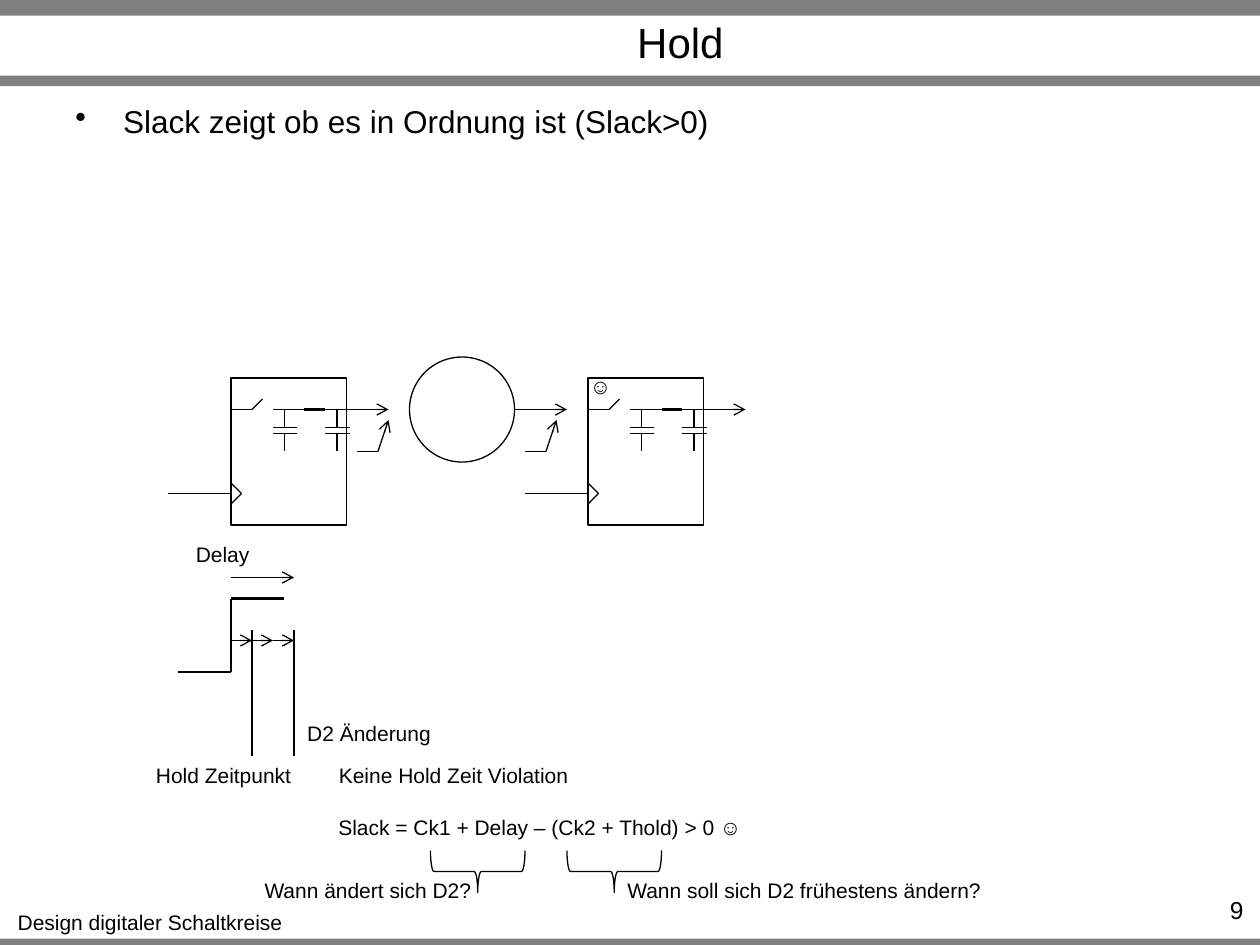
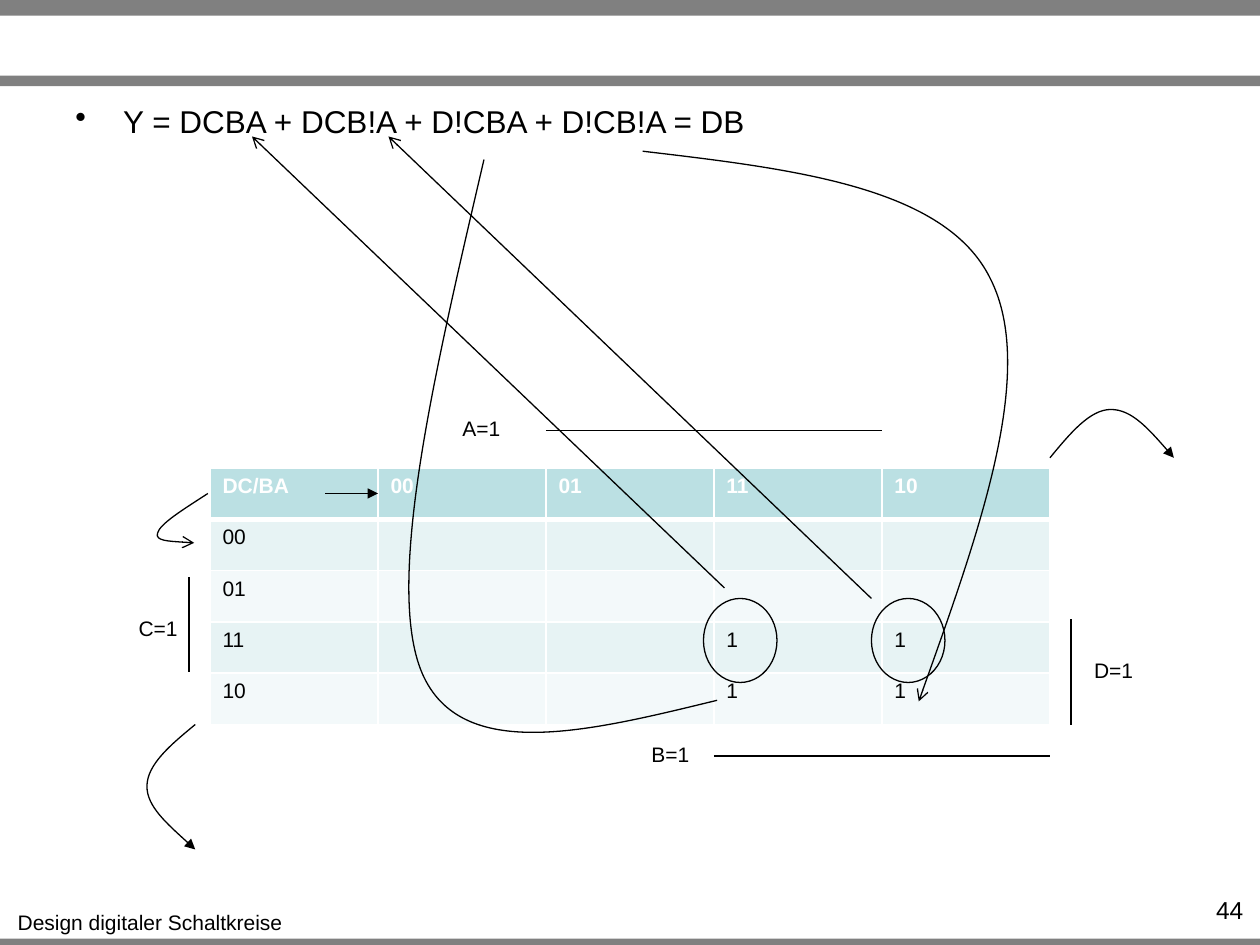
from lxml import etree
from pptx import Presentation
from pptx.dml.color import RGBColor
from pptx.enum.shapes import MSO_CONNECTOR, MSO_SHAPE
from pptx.enum.text import MSO_ANCHOR, MSO_AUTO_SIZE, PP_ALIGN
from pptx.oxml.ns import qn
from pptx.util import Emu, Inches, Pt

STRAIGHT = MSO_CONNECTOR.STRAIGHT
RECT, OVAL, BRACE = MSO_SHAPE.RECTANGLE, MSO_SHAPE.OVAL, MSO_SHAPE.LEFT_BRACE
LEFT, CENTER, RIGHT = PP_ALIGN.LEFT, PP_ALIGN.CENTER, PP_ALIGN.RIGHT
MIDDLE = MSO_ANCHOR.MIDDLE
NO_AUTOSIZE = MSO_AUTO_SIZE.NONE

FONT = "Arial"
INK, PAPER, BAND = "000000", "FFFFFF", "808080"
HEADER_FILL, ROW_FILLS = "BBE0E3", ("E7F3F4", "F3F9FA")
TITLE_ONLY, BLANK = 5, 6  # layout numbers
COLUMNS, ROWS = 120, 90  # grid of the slide, 12 cells to the inch
LABEL_HEIGHT = 3.6


def color(hex_string):
    return RGBColor.from_string(hex_string)


def grid(*cells):
    return [Emu(round(cell * Inches(1) / 12)) for cell in cells]


class Deck:
    """Holds the style and the slide being drawn."""

    def __init__(self):
        self.prs = Presentation()
        self.prs.slide_width, self.prs.slide_height = grid(COLUMNS, ROWS)
        self.slide = None

    def new_slide(self, number, title=None):
        layout = self.prs.slide_layouts[TITLE_ONLY if title else BLANK]
        self.slide = self.prs.slides.add_slide(layout)
        for top, height in ((89.4, 1), (0, 1.5), (7.2, 1)):
            self.shape(RECT, 0, top, COLUMNS, height, fill=BAND, line=None)
        self.label("Design digitaler Schaltkreise", 0.4, 86, 27.8)
        self.text(str(number), 109.2, 84.7, 10.4, 2.9, 14, RIGHT)
        if title:
            self.title(title)

    def title(self, words):
        heading = self.slide.shapes.title
        (heading.left, heading.top,
         heading.width, heading.height) = grid(15.6, 1.7, 98.4, 4.6)
        frame = heading.text_frame
        frame.text = words
        frame.auto_size = NO_AUTOSIZE
        frame.vertical_anchor = MIDDLE
        self.format(frame.paragraphs[0], 24, CENTER)

    def format(self, paragraph, size, align, ink=INK, bold=False):
        paragraph.alignment = align
        font = paragraph.font
        font.name, font.size, font.bold = FONT, Pt(size), bold
        font.color.rgb = color(ink)

    def text(self, words, x, y, width, height, size, align, wrap=True,
             bullet=False):
        box = self.slide.shapes.add_textbox(*grid(x, y, width, height))
        frame = box.text_frame
        frame.word_wrap = wrap
        frame.text = words
        paragraph = frame.paragraphs[0]
        if bullet:
            props = paragraph._p.get_or_add_pPr()
            props.set("marL", str(Inches(0.38)))
            props.set("indent", str(-Inches(0.38)))
            etree.SubElement(props, qn("a:buChar"), char="•")
        self.format(paragraph, size, align)

    def label(self, words, x, y, width):
        self.text(words, x, y, width, LABEL_HEIGHT, 12, CENTER, wrap=False)

    def bullet(self, words, height):
        self.text(words, 6, 9.1, 108, height, 18, LEFT, bullet=True)

    def outline(self, shape, weight=0.75, head=None):
        shape.line.color.rgb = color(INK)
        shape.line.width = Pt(weight)
        if head:
            etree.SubElement(shape.line._get_or_add_ln(), qn("a:tailEnd"),
                             type=head)

    def shape(self, kind, x, y, width, height, fill=None, line=INK, turn=0):
        shape = self.slide.shapes.add_shape(kind, *grid(x, y, width, height))
        shape.shadow.inherit = False
        shape.rotation = turn
        if fill:
            shape.fill.solid()
            shape.fill.fore_color.rgb = color(fill)
        else:
            shape.fill.background()
        if line:
            self.outline(shape)
        else:
            shape.line.fill.background()

    def line(self, x1, y1, x2, y2, head=None, weight=0.75):
        line = self.slide.shapes.add_connector(STRAIGHT, *grid(x1, y1, x2, y2))
        self.outline(line, weight, head)
        etree.SubElement(line._element.spPr, qn("a:effectLst"))

    def polyline(self, *points, head=None):
        """Joined lines; the head sits on the last one."""
        for start, end in zip(points, points[1:]):
            self.line(*start, *end, head=head if end == points[-1] else None)

    def curve(self, *points, head=None):
        """Cubic curve: a start, then two control points and an end each."""
        start, *rest = [grid(*point) for point in points]
        builder = self.slide.shapes.build_freeform(*start)
        builder.add_line_segments(rest, close=False)
        curve = builder.convert_to_shape()
        path = next(curve._element.iter(qn("a:path")))
        sides = path.findall(qn("a:lnTo"))
        for first in range(0, len(sides), 3):
            bezier = etree.SubElement(path, qn("a:cubicBezTo"))
            for side in sides[first:first + 3]:
                bezier.append(side[0])
                path.remove(side)
        curve.shadow.inherit = False
        curve.fill.background()
        self.outline(curve, head=head)

    def borders(self, cell, top, bottom):
        props = cell._tc.get_or_add_tcPr()
        for side, weight in (("L", 1), ("R", 1), ("T", top), ("B", bottom)):
            edge = etree.SubElement(props, qn("a:ln" + side), w=str(Pt(weight)))
            fill = etree.SubElement(edge, qn("a:solidFill"))
            etree.SubElement(fill, qn("a:srgbClr"), val=PAPER)

    def table(self, rows, x, y, column_width, row_height):
        count = len(rows[0])
        table = self.slide.shapes.add_table(
            len(rows), count,
            *grid(x, y, column_width * count, row_height * len(rows))).table
        for r, row in enumerate(rows):
            header = r == 0
            for c, words in enumerate(row):
                cell = table.cell(r, c)
                self.borders(cell, 3 if r == 1 else 1, 3 if header else 1)
                cell.fill.solid()
                cell.fill.fore_color.rgb = color(
                    HEADER_FILL if header else ROW_FILLS[(r - 1) % 2])
                cell.text = words
                self.format(cell.text_frame.paragraphs[0], 12, LEFT,
                            PAPER if header else INK, header)

    # Circuit parts
    def capacitor(self, x):
        self.line(x, 39, x, 40.7)
        for plate in (40.7, 41.3):
            self.line(x + 1.2, plate, x - 1.1, plate)
        self.line(x, 41.3, x, 43)

    def flip_flop(self, x):
        self.shape(RECT, x, 36, 11, 14)
        # Clock input
        self.polyline((x, 46), (x + 1, 47), (x, 48))
        self.line(x, 47, x - 6, 47)
        # Data path with switch
        self.polyline((x, 39), (x + 2, 39), (x + 3, 38))
        self.line(x + 4, 39, x + 7, 39)
        self.line(x + 7, 39, x + 9, 39, weight=2)
        self.line(x + 9, 39, x + 10, 39)
        self.line(x + 10, 39, x + 15, 39, head="arrow")
        for offset in (5.1, 10.1):
            self.capacitor(x + offset)


def hold_slide(deck):
    deck.new_slide(9, "Hold")
    deck.bullet("Slack zeigt ob es in Ordnung ist (Slack>0)", 14.9)

    # Two flip-flops with the logic between them
    for x in (22, 56):
        deck.flip_flop(x)
    deck.shape(OVAL, 39, 34, 10, 10)
    deck.line(49, 39, 54, 39, head="arrow")
    for x in (34, 50):
        deck.polyline((x, 43), (x + 2, 43), (x + 3, 40), head="arrow")

    # Clock edge and times
    deck.polyline((17, 64), (22, 64), (22, 57))
    deck.line(22, 57, 27, 57, weight=2)
    deck.line(22, 55, 28, 55, head="arrow")
    for x in (22, 24, 26):
        deck.line(x, 61, x + 2, 61, head="arrow")
    for x in (24, 28):
        deck.line(x, 60, x, 72)

    # Labels and slack formula
    for words, x, y, width in (
            ("D2 Änderung", 28, 68, 14.3),
            ("Keine Hold Zeit Violation", 31, 72, 24.4),
            ("Delay", 17.4, 51, 7.6),
            ("Hold Zeitpunkt", 13.6, 72, 15.4),
            ("Slack = Ck1 + Delay – (Ck2 + Thold) > 0 ☺", 31, 77, 40.9),
            ("☺", 55, 35, 4.1),
            ("Wann soll sich D2 frühestens ändern?", 58.4, 83, 36.4),
            ("Wann ändert sich D2?", 23.9, 83, 22.3)):
        deck.label(words, x, y, width)
    for x in (43.5, 56.5):
        deck.shape(BRACE, x, 78.5, 4, 9, turn=270)


def karnaugh_slide(deck):
    deck.new_slide(44)
    deck.bullet("Y = DCBA + DCB!A + D!CBA + D!CB!A = DB", 23.9)

    # Karnaugh map
    deck.table([["DC/BA", "00", "01", "11", "10"],
                ["00", "", "", "", ""],
                ["01", "", "", "", ""],
                ["11", "", "", "1", "1"],
                ["10", "", "", "1", "1"]], 20, 44.6, 16, 4.88)

    # Ranges in which each variable is 1
    for variable, x, y, span in (("A", 42.8, 39, (52, 41, 84, 41)),
                                 ("B", 60.8, 70, (68, 72, 100, 72)),
                                 ("C", 12, 58, (18, 55, 18, 64)),
                                 ("D", 103, 62, (102, 59, 102, 69))):
        deck.label(f"{variable}=1", x, y, 6.1)
        deck.line(*span)

    # Links between ones and terms
    for x in (67, 83):
        deck.shape(OVAL, x, 57, 7, 8)
    deck.line(69, 56, 24, 13, head="arrow")
    deck.line(83, 57, 37, 13, head="arrow")
    deck.curve((68.3, 66.7), (56, 69.7), (43.9, 72.7), (40.2, 64.1),
               (36.6, 55.6), (41.4, 35.4), (46.1, 15.2))
    deck.curve((61.2, 14.4), (75.6, 16.1), (90, 17.8), (94.3, 26.5),
               (98.8, 35.3), (93.1, 51.1), (87.5, 66.8), head="arrow")

    # Reading directions and wrap-around
    deck.line(31, 47, 36, 47, head="triangle")
    deck.curve((19.8, 47), (17.5, 48.5), (15.2, 49.9), (15, 50.8),
               (14.8, 51.5), (16.6, 51.6), (18.5, 51.7), head="arrow")
    deck.curve((100, 43.6), (101.9, 41.3), (103.8, 39), (105.8, 39),
               (107.8, 39), (109.8, 41.3), (111.8, 43.6), head="triangle")
    deck.curve((18.6, 69), (16.3, 70.9), (14, 72.8), (14, 74.9),
               (14, 76.8), (16.3, 78.8), (18.6, 80.9), head="triangle")


def main():
    deck = Deck()
    hold_slide(deck)
    karnaugh_slide(deck)
    deck.prs.save("out.pptx")


if __name__ == "__main__":
    main()
